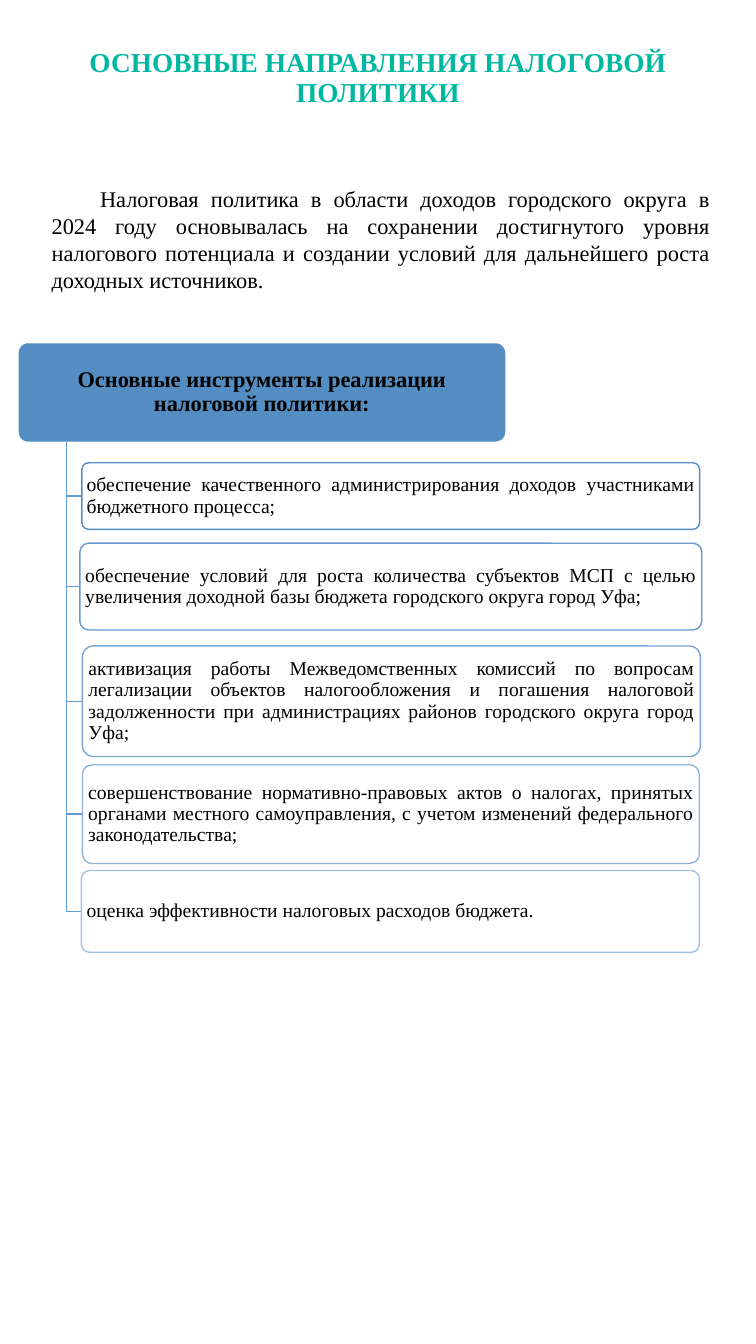
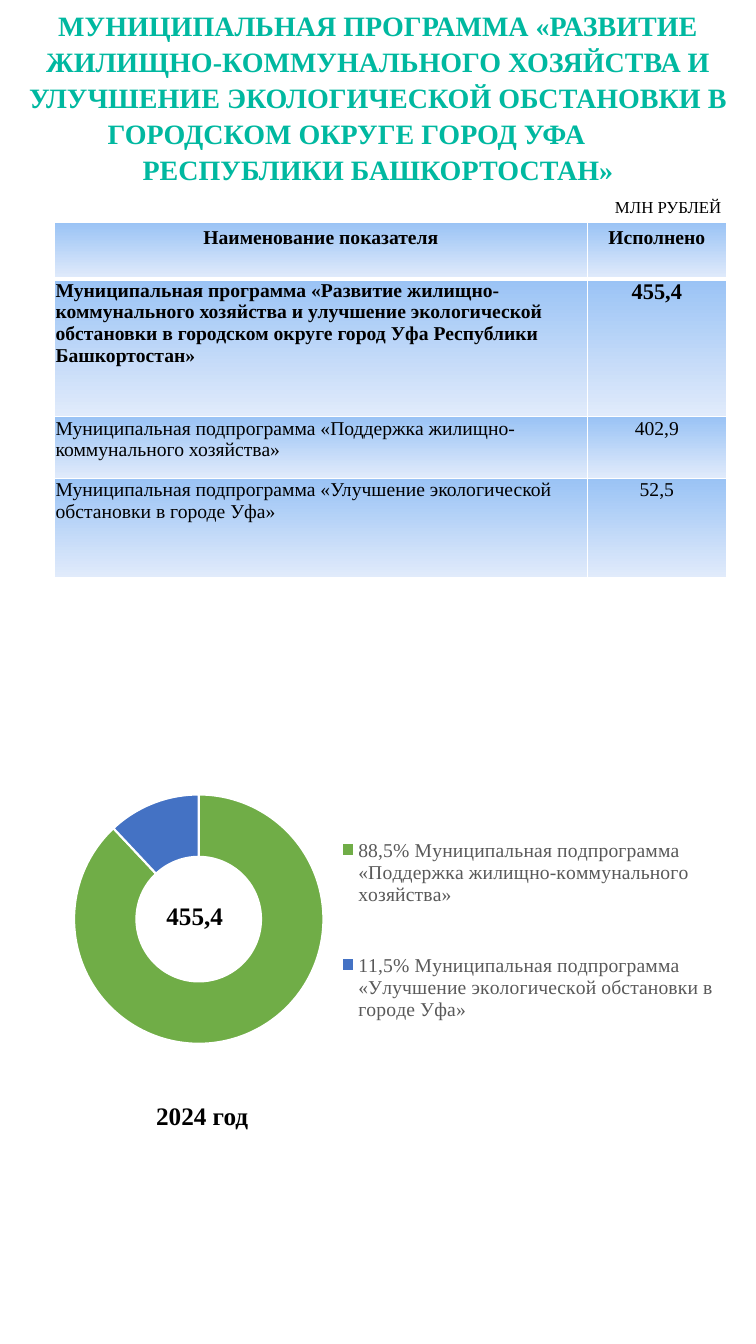
"""Builds two portrait slides on tax policy and a municipal programme."""
from lxml import etree
from pptx import Presentation
from pptx.chart.data import CategoryChartData
from pptx.dml.color import RGBColor
from pptx.enum import chart as charts, shapes, text
from pptx.oxml import parse_xml
from pptx.oxml.ns import nsdecls, qn
from pptx.util import Pt

FONT = "Times New Roman"
TEAL = RGBColor(0x00, 0xB8, 0xA0)
BLACK = RGBColor(0, 0, 0)
WHITE = RGBColor(0xFF, 0xFF, 0xFF)
GREY = RGBColor(0x59, 0x59, 0x59)
HEADER_BLUE = RGBColor(0x53, 0x8D, 0xC1)
BRANCH_BLUE = RGBColor(0x5F, 0x9C, 0xD5)
CELL_TOP = RGBColor(0x9A, 0xC3, 0xF5)
CELL_BOTTOM = RGBColor(0xE1, 0xEB, 0xFB)
SECTOR_COLORS = [RGBColor(0x70, 0xAD, 0x47), RGBColor(0x44, 0x72, 0xC4)]
LEFT, CENTER, RIGHT, JUSTIFY = (
    text.PP_ALIGN.LEFT, text.PP_ALIGN.CENTER, text.PP_ALIGN.RIGHT, text.PP_ALIGN.JUSTIFY)
MIDDLE = text.MSO_ANCHOR.MIDDLE

POLICY_TITLE = [("ОСНОВНЫЕ НАПРАВЛЕНИЯ НАЛОГОВОЙ ПОЛИТИКИ", 0)]
POLICY_INTRO = (
    "Налоговая политика в области доходов городского округа в 2024 году основывалась "
    "на сохранении достигнутого уровня налогового потенциала и создании условий для "
    "дальнейшего роста доходных источников.")
TOOLS_HEADING = "Основные инструменты реализации налоговой политики:"
HEADING_BOX = (12.8, 244.7, 348.6, 71.3)
TRUNK_X = 47.5
TOOLS = [
    ("обеспечение качественного администрирования доходов участниками бюджетного процесса;",
     (58.5, 330.6, 441.2, 47.5), RGBColor(0x53, 0x8D, 0xC1)),
    ("обеспечение условий для роста количества субъектов МСП с целью увеличения доходной "
     "базы бюджета городского округа город Уфа;",
     (57.1, 388, 444.2, 62), RGBColor(0x67, 0x99, 0xCA)),
    ("активизация работы Межведомственных комиссий по вопросам легализации объектов "
     "налогообложения и погашения налоговой задолженности при администрациях районов "
     "городского округа город Уфа;",
     (58.9, 461.4, 441.4, 79), RGBColor(0x7B, 0xA6, 0xD3)),
    ("совершенствование нормативно-правовых актов о налогах, принятых органами местного "
     "самоуправления, с учетом изменений федерального законодательства;",
     (58.9, 546.3, 440.6, 70.5), RGBColor(0x90, 0xB3, 0xDB)),
    ("оценка эффективности налоговых расходов бюджета.",
     (58.2, 621.8, 441.4, 58.5), RGBColor(0xA5, 0xC1, 0xE3)),
]

PROGRAMME_TITLE = [
    ("МУНИЦИПАЛЬНАЯ ПРОГРАММА «РАЗВИТИЕ ЖИЛИЩНО-КОММУНАЛЬНОГО ХОЗЯЙСТВА И УЛУЧШЕНИЕ "
     "ЭКОЛОГИЧЕСКОЙ ОБСТАНОВКИ В", 0),
    ("ГОРОДСКОМ ОКРУГЕ ГОРОД УФА", 45),
    ("РЕСПУБЛИКИ БАШКОРТОСТАН»", 0),
]
HOUSING = "Муниципальная подпрограмма «Поддержка жилищно-коммунального хозяйства»"
ECOLOGY = "Муниципальная подпрограмма «Улучшение экологической обстановки в городе Уфа»"
TOTAL = "455,4"
TABLE_ROWS = [
    ("Наименование показателя", "Исполнено"),
    ("Муниципальная программа «Развитие жилищно-коммунального хозяйства и улучшение "
     "экологической обстановки в городском округе город Уфа Республики Башкортостан»", TOTAL),
    (HOUSING, "402,9"),
    (ECOLOGY, "52,5"),
]
COLUMN_WIDTHS = [380.6, 99.2]
ROW_HEIGHTS = [40.4, 98.6, 44, 71]
SHARES = [("88,5% " + HOUSING, 88), ("11,5% " + ECOLOGY, 12)]
PLOT_LAYOUT = {"x": 0.024, "y": 0.091, "w": 0.399, "h": 0.459}
LEGEND_LAYOUT = {"x": 0.402, "y": 0.086, "w": 0.56, "h": 0.51}


def points(box):
    """Convert a sequence of numbers to point lengths."""
    return [Pt(value) for value in box]


def write(paragraph, words, size, bold=False, color=BLACK, align=LEFT, spacing=None):
    """Put one styled run into a paragraph."""
    paragraph.alignment = align
    if spacing:
        paragraph.line_spacing = spacing
    run = paragraph.add_run()
    run.text = words
    run.font.name = FONT
    run.font.size = Pt(size)
    run.font.bold = bold
    run.font.color.rgb = color


def add_frame(slide, box, anchor=text.MSO_ANCHOR.TOP, wrap=True):
    """Add an empty text box and return its frame."""
    frame = slide.shapes.add_textbox(*points(box)).text_frame
    frame.word_wrap = wrap
    frame.vertical_anchor = anchor
    return frame


def add_text(slide, box, words, size, wrap=True, **style):
    """Add a text box holding one paragraph and return the paragraph."""
    paragraph = add_frame(slide, box, wrap=wrap).paragraphs[0]
    write(paragraph, words, size, **style)
    return paragraph


def add_title(slide, box, lines, size, spacing):
    """Add the shared slide title from lines with right margins."""
    frame = add_frame(slide, box, anchor=MIDDLE)
    for index, (words, margin) in enumerate(lines):
        paragraph = frame.add_paragraph() if index else frame.paragraphs[0]
        paragraph._p.get_or_add_pPr().set("marR", str(Pt(margin)))
        write(paragraph, words, size, bold=True, color=TEAL, align=CENTER, spacing=spacing)


def add_card(slide, box, words, size, fill, line, **style):
    """Add a rounded card with text."""
    card = slide.shapes.add_shape(shapes.MSO_SHAPE.ROUNDED_RECTANGLE, *points(box))
    card.adjustments[0] = 0.1
    card.shadow.inherit = False
    card.fill.solid()
    card.fill.fore_color.rgb = fill
    card.line.color.rgb = line
    card.line.width = Pt(1)
    frame = card.text_frame
    frame.word_wrap = True
    frame.vertical_anchor = MIDDLE
    frame.margin_left = frame.margin_right = Pt(2)
    frame.margin_top = frame.margin_bottom = Pt(1.5)
    write(frame.paragraphs[0], words, size, spacing=0.9, **style)


def add_branch(slide, top, box):
    """Draw the elbow from the heading card to one tool card."""
    left, card_top, _, height = box
    middle = card_top + height / 2
    builder = slide.shapes.build_freeform(Pt(TRUNK_X), Pt(top))
    builder.add_line_segments(
        [points((TRUNK_X, middle)), points((left, middle))], close=False)
    branch = builder.convert_to_shape()
    branch.shadow.inherit = False
    branch.fill.background()
    branch.line.color.rgb = BRANCH_BLUE
    branch.line.width = Pt(1)


def set_border(cell, side, width):
    """Draw one white cell border."""
    border = parse_xml(
        f'<a:{side} {nsdecls("a")} w="{Pt(width)}"><a:solidFill>'
        f'<a:srgbClr val="{WHITE}"/></a:solidFill></a:{side}>')
    cell._tc.get_or_add_tcPr().append(border)


def add_table(slide):
    """Add the table of programme spending."""
    table = slide.shapes.add_table(
        len(TABLE_ROWS), len(COLUMN_WIDTHS),
        *points((39, 158.8, sum(COLUMN_WIDTHS), sum(ROW_HEIGHTS)))).table
    for column, width in zip(table.columns, COLUMN_WIDTHS):
        column.width = Pt(width)
    for row_index, (row, height) in enumerate(zip(TABLE_ROWS, ROW_HEIGHTS)):
        table.rows[row_index].height = Pt(height)
        for column_index, words in enumerate(row):
            cell = table.cell(row_index, column_index)
            if row_index:
                cell.margin_left = cell.margin_right = cell.margin_top = Pt(0.7)
                cell.margin_bottom = 0
            for side in ("lnL", "lnR", "lnT", "lnB"):
                heavy = (row_index, side) in ((0, "lnB"), (1, "lnT"))
                set_border(cell, side, 3 if heavy else 1)
            cell.fill.gradient()
            cell.fill.gradient_angle = 270
            for stop, color in zip(cell.fill.gradient_stops, (CELL_TOP, CELL_BOTTOM)):
                stop.color.rgb = color
            write(cell.text_frame.paragraphs[0], words, 16 if words == TOTAL else 14,
                  bold=row_index < 2,
                  align=CENTER if column_index or not row_index else LEFT)


def set_layout(element, layout, inner=False):
    """Place a chart part by fractions of the chart area."""
    for old in element.findall(qn("c:layout")):
        element.remove(old)
    node = etree.Element(qn("c:layout"))
    manual = etree.SubElement(node, qn("c:manualLayout"))
    values = {"layoutTarget": "inner"} if inner else {}
    values.update(xMode="edge", yMode="edge", **layout)
    for name, value in values.items():
        etree.SubElement(manual, qn("c:" + name)).set("val", str(value))
    position = element.find(qn("c:legendPos"))
    if position is None:
        element.insert(0, node)
    else:
        position.addnext(node)


def add_doughnut(slide):
    """Add the doughnut of programme shares."""
    data = CategoryChartData()
    data.categories = [name for name, _ in SHARES]
    data.add_series("Series 1", [value for _, value in SHARES])
    chart = slide.shapes.add_chart(
        charts.XL_CHART_TYPE.DOUGHNUT, *points((27.4, 532.2, 512.6, 388)), data).chart
    chart.has_title = False
    chart.font.name = "Calibri"
    chart.font.size = Pt(10)
    chart.font.color.rgb = BLACK
    plot = chart.plots[0]
    plot.vary_by_categories = True
    plot._element.find(qn("c:holeSize")).set("val", "75")
    for index, color in enumerate(SECTOR_COLORS):
        sector = plot.series[0].points[index].format
        sector.fill.solid()
        sector.fill.fore_color.rgb = color
        sector.line.color.rgb = WHITE
        sector.line.width = Pt(1.5)
    chart.has_legend = True
    legend = chart.legend
    legend.position = charts.XL_LEGEND_POSITION.RIGHT
    legend.include_in_layout = False
    legend.font.name = FONT
    legend.font.size = Pt(14)
    legend.font.color.rgb = GREY
    set_layout(legend._element, LEGEND_LAYOUT)
    set_layout(chart._chartSpace.chart.plotArea, PLOT_LAYOUT, inner=True)


def build_policy(slide):
    """Fill the tax policy slide."""
    add_title(slide, (0, 26, 540, 60.5), POLICY_TITLE, 19.5, 0.9)
    intro = add_text(slide, (29.8, 129, 484.4, 85), POLICY_INTRO, 16, align=JUSTIFY)
    intro._p.get_or_add_pPr().set("indent", str(Pt(34.6)))
    add_card(slide, HEADING_BOX, TOOLS_HEADING, 16, HEADER_BLUE, WHITE,
             bold=True, align=CENTER)
    for words, box, line in TOOLS:
        add_branch(slide, HEADING_BOX[1] + HEADING_BOX[3], box)
        add_card(slide, box, words, 14, WHITE, line, align=JUSTIFY)


def build_programme(slide):
    """Fill the municipal programme slide."""
    add_title(slide, (0, 0, 540, 136.8), PROGRAMME_TITLE, 20, 1.07)
    add_doughnut(slide)
    add_table(slide)
    add_text(slide, (104.4, 639.6, 62, 29), TOTAL, 18, bold=True, align=RIGHT)
    add_text(slide, (104.4, 782.4, 90, 95), "2024 год", 18, bold=True)
    add_text(slide, (432.2, 136.8, 107.8, 21.6), "МЛН РУБЛЕЙ", 12)


def main():
    """Build and save the presentation."""
    presentation = Presentation()
    presentation.slide_width, presentation.slide_height = Pt(540), Pt(960)
    for build in (build_policy, build_programme):
        build(presentation.slides.add_slide(presentation.slide_layouts[6]))
    presentation.save("out.pptx")


if __name__ == "__main__":
    main()
